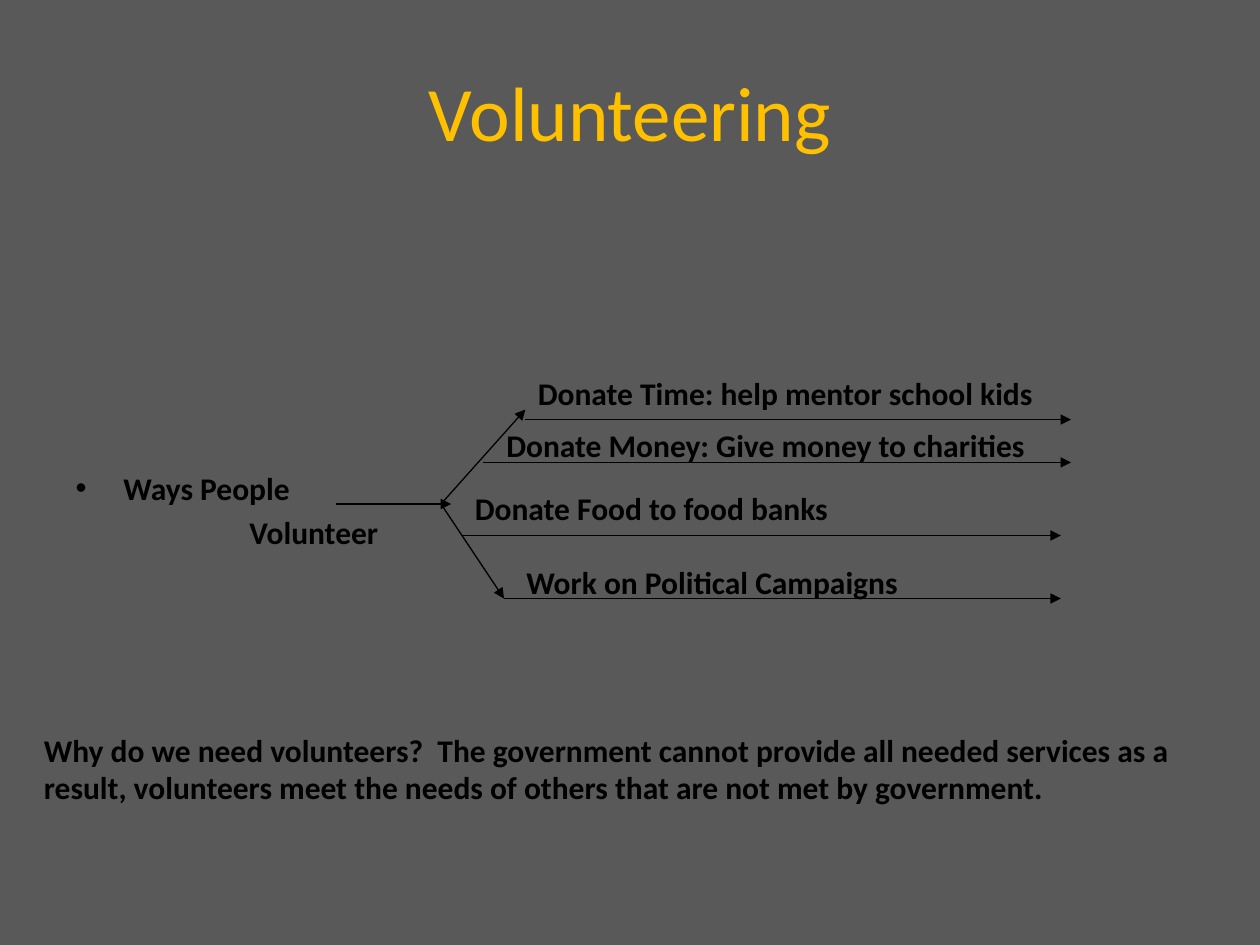
"""Build the Volunteering slide with its branching diagram."""
from lxml import etree
from pptx import Presentation
from pptx import util as u
from pptx.dml.color import RGBColor
from pptx.enum import shapes, text
from pptx.oxml import ns

GREY = RGBColor(0x59, 0x59, 0x59)
GOLD = RGBColor(0xFF, 0xC0, 0x00)
BLACK = RGBColor(0, 0, 0)

HUB = (3.5, 4)
TOP_TIP, BOTTOM_TIP = (4.17, 3.25), (4, 4.75)
BRANCHES = [
    ("Donate Time: help mentor school kids", (4.17, 2.92, 5), (4.17, 3.33, 8.5)),
    ("Donate Money: Give money to charities", (3.92, 3.33, 4.92), (3.83, 3.67, 8.5)),
    ("Donate Food to food banks", (3.67, 3.83, 5.42), (3.67, 4.25, 8.42)),
    ("Work on Political Campaigns", (4.08, 4.42, 4.33), (4, 4.75, 8.42)),
]
REASON = (
    "Why do we need volunteers?  The government cannot provide all needed services "
    "as a result, volunteers meet the needs of others that are not met by government."
)


class Board:
    """Hold the style and the current slide."""

    heading = {"name": "Calibri", "size": u.Pt(44), "bold": False}
    strong = {"name": "Calibri", "size": u.Pt(18), "bold": True}

    def __init__(self, deck):
        self.slide = deck.slides.add_slide(deck.slide_layouts[1])
        fill = self.slide.background.fill
        fill.solid()
        fill.fore_color.rgb = GREY

    def place(self, holder, left, top, width, height):
        box = {"left": left, "top": top, "width": width, "height": height}
        for side, inches in box.items():
            setattr(holder, side, u.Inches(inches))

    def add_words(self, paragraph, words, style, colour):
        run = paragraph.add_run()
        run.text = words
        for key, value in style.items():
            setattr(run.font, key, value)
        run.font.color.rgb = colour

    def title(self, words):
        holder = self.slide.shapes.title
        self.place(holder, 0.5, 0.25, 9, 1.25)
        holder.text_frame.vertical_anchor = text.MSO_ANCHOR.MIDDLE
        heading = holder.text_frame.paragraphs[0]
        heading.alignment = text.PP_ALIGN.CENTER
        self.add_words(heading, words, self.heading, GOLD)

    def topic(self, bulleted, continuation):
        holder = self.slide.placeholders[1]
        self.place(holder, 0.5, 3.67, 9, 3.03)
        frame = holder.text_frame
        lines = [
            (frame.paragraphs[0], bulleted, 0.38, -0.38, 0, "•"),
            (frame.add_paragraph(), continuation, 1.38, 0, 3.6, None),
        ]
        for line, words, margin, indent, gap, bullet in lines:
            line.space_before = u.Pt(gap)
            props = line._p.get_or_add_pPr()
            props.set("marL", str(u.Inches(margin)))
            props.set("indent", str(u.Inches(indent)))
            if bullet:
                etree.SubElement(props, ns.qn("a:buChar")).set("char", bullet)
            else:
                etree.SubElement(props, ns.qn("a:buNone"))
            self.add_words(line, words, self.strong, BLACK)

    def label(self, words, left, top, width, height=0.4):
        box = self.slide.shapes.add_textbox(*map(u.Inches, (left, top, width, height)))
        frame = box.text_frame
        frame.word_wrap = True
        frame.auto_size = text.MSO_AUTO_SIZE.SHAPE_TO_FIT_TEXT
        self.add_words(frame.paragraphs[0], words, self.strong, BLACK)

    def arrow(self, start, end):
        ends = map(u.Inches, (*start, *end))
        link = self.slide.shapes.add_connector(shapes.MSO_CONNECTOR.STRAIGHT, *ends)
        link.line.color.rgb = BLACK
        link.line.width = u.Pt(0.75)
        outline = link.line._get_or_add_ln()
        etree.SubElement(outline, ns.qn("a:tailEnd")).set("type", "triangle")
        etree.SubElement(link._element.spPr, ns.qn("a:effectLst"))


def main():
    deck = Presentation()
    deck.slide_width, deck.slide_height = u.Inches(10), u.Inches(7.5)
    board = Board(deck)
    board.title("Volunteering")
    board.topic("Ways People", "Volunteer")
    board.arrow((2.67, 4), (3.58, 4))
    for tip in (TOP_TIP, BOTTOM_TIP):
        board.arrow(HUB, tip)
    for _, _, (start, level, end) in BRANCHES:
        board.arrow((start, level), (end, level))
    for way, spot, _ in BRANCHES:
        board.label(way, *spot)
    board.label(REASON, 0.25, 5.75, 9.5, 1)
    deck.save("out.pptx")


if __name__ == "__main__":
    main()
